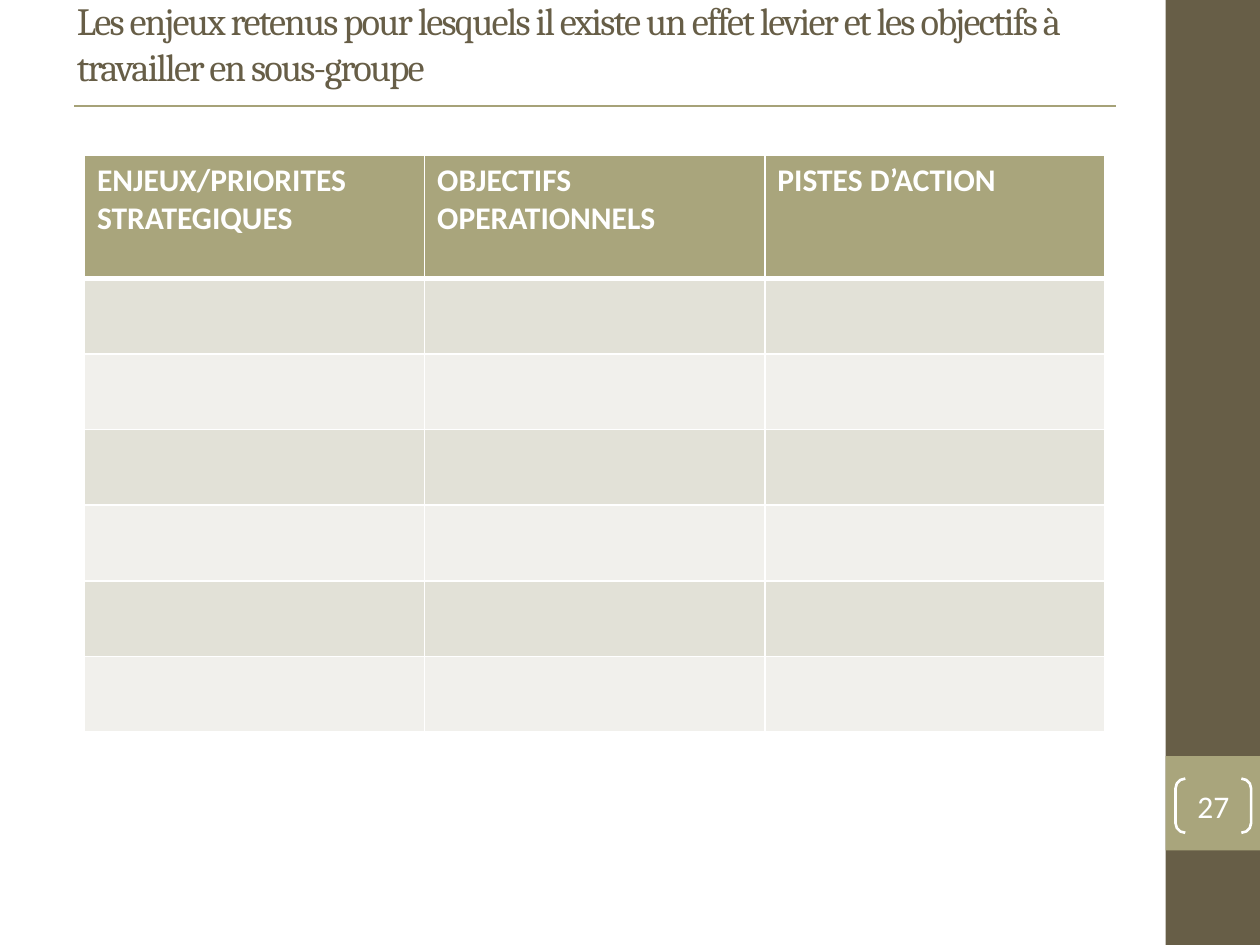
from lxml import etree
from pptx import Presentation
from pptx.dml.color import RGBColor
from pptx.enum.shapes import MSO_CONNECTOR, MSO_SHAPE
from pptx.enum.text import MSO_ANCHOR, MSO_AUTO_SIZE, PP_ALIGN
from pptx.oxml.ns import qn
from pptx.util import Inches, Pt

RECT, BRACKETS = MSO_SHAPE.RECTANGLE, MSO_SHAPE.DOUBLE_BRACKET
STRAIGHT = MSO_CONNECTOR.STRAIGHT
MIDDLE, LEFT, CENTER = MSO_ANCHOR.MIDDLE, PP_ALIGN.LEFT, PP_ALIGN.CENTER
NO_AUTOFIT = MSO_AUTO_SIZE.NONE

BROWN = RGBColor(0x67, 0x5E, 0x47)
OLIVE = RGBColor(0xA9, 0xA5, 0x7C)
RULE = RGBColor(0xA6, 0xA2, 0x78)
BAND_DARK = RGBColor(0xE2, 0xE1, 0xD7)
BAND_LIGHT = RGBColor(0xF1, 0xF0, 0xEC)
WHITE = RGBColor(0xFF, 0xFF, 0xFF)


def style_run(r, font, size, color, bold=False):
    r.font.name = font
    r.font.size = Pt(size)
    r.font.color.rgb = color
    r.font.bold = bold


def add_border(cell, side, width):
    ln = etree.SubElement(cell._tc.get_or_add_tcPr(), qn("a:" + side), w=str(Pt(width)))
    fill = etree.SubElement(ln, qn("a:solidFill"))
    etree.SubElement(fill, qn("a:srgbClr"), val=str(WHITE))


prs = Presentation()
prs.slide_width, prs.slide_height = Inches(10), Inches(7.5)
s = prs.slides.add_slide(prs.slide_layouts[5])

for top, height, color in [(0, 7.5, BROWN), (6, 0.75, OLIVE)]:
    sp = s.shapes.add_shape(RECT, Inches(9.25), Inches(top), Inches(0.75), Inches(height))
    sp.shadow.inherit = False
    sp.fill.solid()
    sp.fill.fore_color.rgb = color
    sp.line.fill.background()

sp = s.shapes.add_shape(BRACKETS, Inches(9.33), Inches(6.18), Inches(0.6), Inches(0.43))
sp.shadow.inherit = False
sp.adjustments[0] = 0.18
sp.fill.background()
sp.line.color.rgb = WHITE
sp.line.width = Pt(1.5)
tf = sp.text_frame
tf.margin_left = tf.margin_right = tf.margin_top = tf.margin_bottom = 0
tf.vertical_anchor = MIDDLE
tf.text = "27"
p = tf.paragraphs[0]
p.alignment = CENTER
style_run(p.runs[0], "Calibri", 18, WHITE)

title = s.shapes.title
title.left, title.top = Inches(0.51), Inches(0.08)
title.width, title.height = Inches(8.33), Inches(0.52)
tf = title.text_frame
tf.word_wrap = True
tf.auto_size = NO_AUTOFIT
tf.vertical_anchor = MIDDLE
tf.text = ("Les enjeux retenus pour lesquels il existe un effet levier "
           "et les objectifs à travailler en sous-groupe")
p = tf.paragraphs[0]
p.alignment = LEFT
r = p.runs[0]
style_run(r, "Cambria", 22, BROWN)
r.font._element.set("spc", "-100")

rule = s.shapes.add_connector(STRAIGHT, Inches(0.59), Inches(0.84), Inches(8.86), Inches(0.84))
rule.line.color.rgb = RULE
rule.line.width = Pt(1)
etree.SubElement(rule._element.spPr, qn("a:effectLst"))

headers = ["ENJEUX/PRIORITES STRATEGIQUES", "OBJECTIFS OPERATIONNELS", "PISTES D’ACTION"]
table = s.shapes.add_table(7, 3, Inches(0.67), Inches(1.23), Inches(8.1), Inches(4.58)).table
for col in table.columns:
    col.width = Inches(2.7)
for i, row in enumerate(table.rows):
    row.height = Inches(0.98 if i == 0 else 0.6)
    for j, cell in enumerate(row.cells):
        for side in ("lnL", "lnR"):
            add_border(cell, side, 1)
        add_border(cell, "lnT", 3 if i == 1 else 1)
        add_border(cell, "lnB", 3 if i == 0 else 1)
        cell.fill.solid()
        if i == 0:
            cell.fill.fore_color.rgb = OLIVE
            cell.text_frame.text = headers[j]
            style_run(cell.text_frame.paragraphs[0].runs[0], "Calibri", 18, WHITE, True)
        else:
            cell.fill.fore_color.rgb = BAND_DARK if i % 2 else BAND_LIGHT

prs.save("out.pptx")
